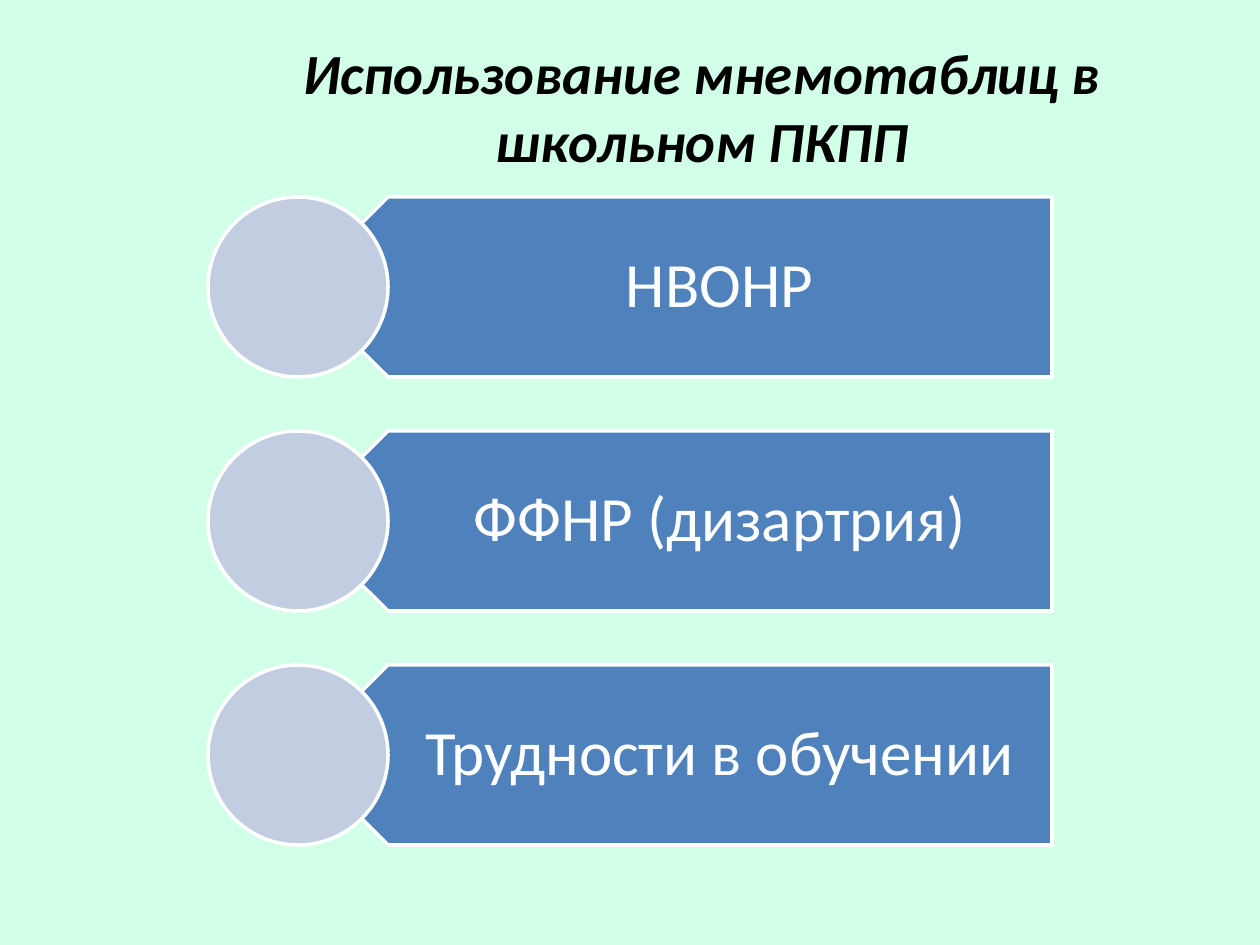
from dataclasses import dataclass

from pptx import Presentation
from pptx.dml.color import RGBColor
from pptx.enum.shapes import MSO_SHAPE as Shape
from pptx.enum.text import MSO_ANCHOR as Anchor, MSO_AUTO_SIZE as AutoSize, PP_ALIGN as Align
from pptx.util import Emu, Pt

EMU_PER_PX = 914400 / 126
FONT = "Calibri"
COLORS = {
    "background": "D1FFE8",
    "title": "000000",
    "arrow": "4F81BD",
    "circle": "C2CDE1",
    "white": "FFFFFF",
}


@dataclass(frozen=True)
class Frame:
    left: int
    top: int
    width: int
    height: int

    def emu(self) -> list[Emu]:
        return [px(n) for n in (self.left, self.top, self.width, self.height)]


@dataclass(frozen=True)
class Row:
    label: str
    top: int


ROW_TOP, ROW_PITCH, ROW_HEIGHT = 197, 234, 180
LABELS = ("НВОНР", "ФФНР (дизартрия)", "Трудности в обучении")
ROWS = [Row(label, ROW_TOP + i * ROW_PITCH) for i, label in enumerate(LABELS)]


def px(length: int) -> Emu:
    return Emu(round(length * EMU_PER_PX))


def color(name: str) -> RGBColor:
    return RGBColor.from_string(COLORS[name])


def style_text(box, text: str, size: float, color_name: str):
    """Fill a box with one centred paragraph and return that paragraph."""
    frame = box.text_frame
    frame.word_wrap = True
    frame.auto_size = AutoSize.NONE
    frame.vertical_anchor = Anchor.MIDDLE
    para = frame.paragraphs[0]
    para.text = text
    para.alignment = Align.CENTER
    para.font.name = FONT
    para.font.size = Pt(size)
    para.font.color.rgb = color(color_name)
    return para


def add_title(page, text: str, frame: Frame) -> None:
    title = page.shapes.title
    title.left, title.top, title.width, title.height = frame.emu()
    para = style_text(title, text, 32.4, "title")
    para.font.bold = True
    para.font.italic = True


def add_outlined(page, kind: Shape, frame: Frame, fill: str):
    shape = page.shapes.add_shape(kind, *frame.emu())
    shape.shadow.inherit = False
    shape.fill.solid()
    shape.fill.fore_color.rgb = color(fill)
    shape.line.color.rgb = color("white")
    shape.line.width = Pt(2)
    return shape


def add_label(page, text: str, frame: Frame) -> None:
    box = page.shapes.add_textbox(*frame.emu())
    para = style_text(box, text, 36, "white")
    para.line_spacing = 0.9
    text_frame = box.text_frame
    text_frame.margin_left, text_frame.margin_right = px(79), px(35)
    text_frame.margin_top = text_frame.margin_bottom = px(19)


def add_row(page, row: Row) -> None:
    arrow = add_outlined(page, Shape.PENTAGON, Frame(298, row.top, 754, ROW_HEIGHT), "arrow")
    arrow.rotation = 180
    add_label(page, row.label, Frame(343, row.top, 709, ROW_HEIGHT))
    add_outlined(page, Shape.OVAL, Frame(208, row.top, ROW_HEIGHT, ROW_HEIGHT), "circle")


def main() -> None:
    deck = Presentation()
    deck.slide_width, deck.slide_height = px(1260), px(945)
    page = deck.slides.add_slide(deck.slide_layouts[5])
    page.background.fill.solid()
    page.background.fill.fore_color.rgb = color("background")
    add_title(page, "Использование мнемотаблиц в школьном ПКПП", Frame(207, 38, 990, 135))
    for row in ROWS:
        add_row(page, row)
    deck.save("out.pptx")


if __name__ == "__main__":
    main()
